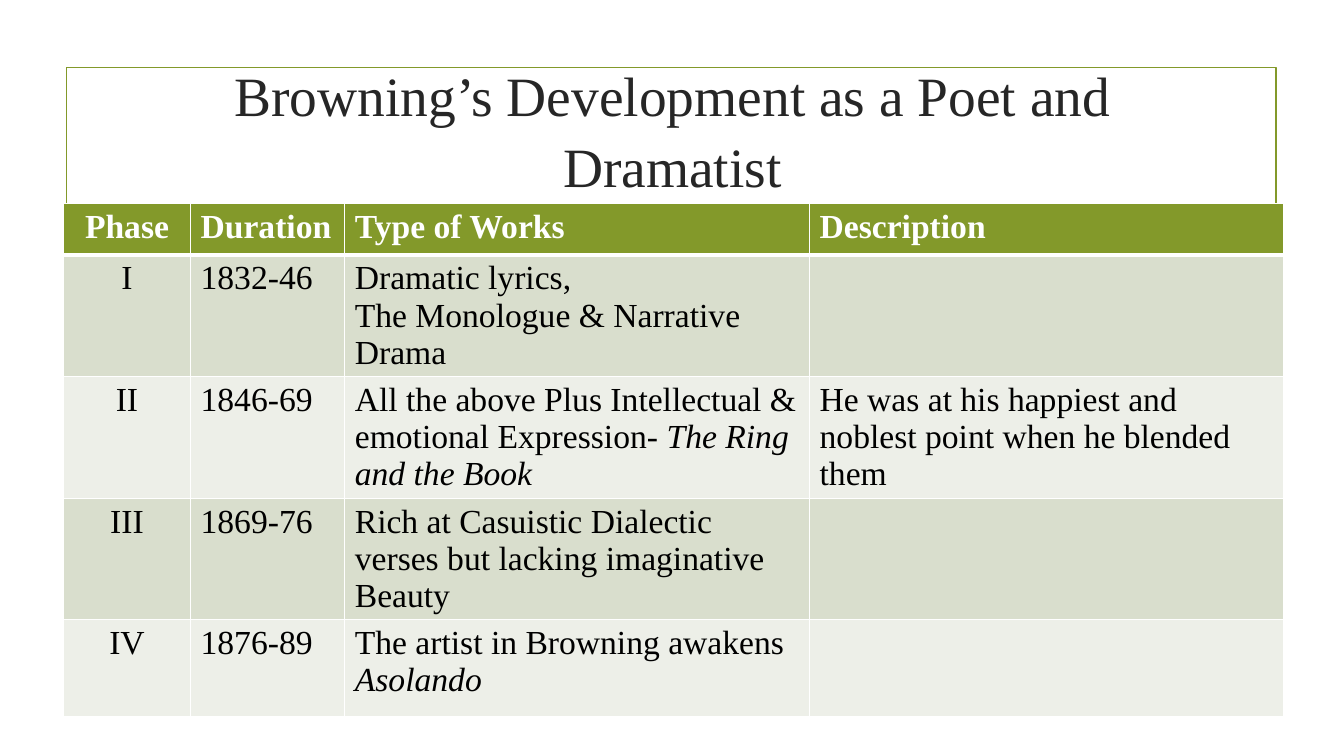
from dataclasses import dataclass

from lxml.etree import SubElement
from pptx import Presentation
from pptx.dml.color import RGBColor
from pptx.enum.shapes import MSO_SHAPE
from pptx.enum.text import MSO_ANCHOR, MSO_AUTO_SIZE, PP_ALIGN
from pptx.oxml.ns import qn
from pptx.slide import Slide
from pptx.table import _Cell as Cell
from pptx.util import Inches, Pt

GREEN = RGBColor(0x83, 0x99, 0x2A)
DARK = RGBColor(0x26, 0x26, 0x26)
BLACK = RGBColor(0, 0, 0)
WHITE = RGBColor(0xFF, 0xFF, 0xFF)
BANDS = (RGBColor(0xD9, 0xDE, 0xCD), RGBColor(0xED, 0xEF, 0xE8))
FACE = "Times New Roman"
HEADS = ("Phase", "Duration", "Type of Works", "Description")
WIDTHS = (1.26, 1.53, 4.61, 4.7)


@dataclass
class Phase:
    name: str
    years: str
    works: str  # a newline starts a paragraph, text after * is italic
    note: str = ""


PHASES = (
    Phase("I", "1832-46", "Dramatic lyrics,\nThe Monologue & Narrative Drama"),
    Phase("II", "1846-69",
          "All the above Plus Intellectual & emotional Expression- *The Ring and the Book",
          "He was at his happiest and noblest point when he blended them"),
    Phase("III", "1869-76",
          "Rich at Casuistic Dialectic verses but lacking imaginative Beauty"),
    Phase("IV", "1876-89", "The artist in Browning awakens\n*Asolando"),
)


def style(font, color: RGBColor, **form) -> None:
    font.color.rgb = color
    for key, value in ({"name": FACE} | form).items():
        setattr(font, key, value)


def edge(cell: Cell, top: float, base: float) -> None:
    """Draw white borders, with the given top and bottom widths."""
    props = cell._tc.get_or_add_tcPr()
    sides = {"lnL": 1, "lnR": 1, "lnT": top, "lnB": base}
    for spot, (tag, width) in enumerate(sides.items()):
        line = props.makeelement(qn(f"a:{tag}"), {"w": str(Pt(width))})
        fill = SubElement(line, qn("a:solidFill"))
        SubElement(fill, qn("a:srgbClr"), val=str(WHITE))
        props.insert(spot, line)


def write(cell: Cell, text: str, color: RGBColor, bold: bool, mid: bool) -> None:
    frame = cell.text_frame
    for num, words in enumerate(text.split("\n")):
        para = frame.add_paragraph() if num else frame.paragraphs[0]
        para.alignment = PP_ALIGN.CENTER if mid else PP_ALIGN.LEFT
        style(para.font, color, size=Pt(24), bold=bold)
        for part, piece in enumerate(words.split("*")):
            if piece:
                run = para.add_run()
                run.text = piece
                style(run.font, color, size=Pt(24), bold=bold, italic=part == 1)


def add_frame(slide: Slide) -> None:
    box = slide.shapes.add_shape(MSO_SHAPE.RECTANGLE, Inches(0.66), Inches(0.67),
                                 Inches(12), Inches(6.17))
    box.shadow.inherit = False
    box.fill.background()
    box.line.color.rgb = GREEN
    box.line.width = Pt(1.25)


def add_title(slide: Slide, text: str) -> None:
    title = slide.shapes.title
    place = {"left": 1.42, "top": 0.72, "width": 10.5, "height": 1.09}
    for key, value in place.items():
        setattr(title, key, Inches(value))
    frame = title.text_frame
    form = {"text": text, "word_wrap": True, "auto_size": MSO_AUTO_SIZE.NONE,
            "vertical_anchor": MSO_ANCHOR.MIDDLE}
    for key, value in form.items():
        setattr(frame, key, value)
    para = frame.paragraphs[0]
    para.alignment = PP_ALIGN.CENTER
    para.line_spacing = 1.07
    style(para.runs[0].font, DARK, size=Pt(39.6))


def add_phases(slide: Slide) -> None:
    rows = [HEADS] + [(p.name, p.years, p.works, p.note) for p in PHASES]
    table = slide.shapes.add_table(len(rows), len(HEADS), Inches(0.63), Inches(2.02),
                                   Inches(sum(WIDTHS)), Inches(4.35)).table
    for col, width in zip(table.columns, WIDTHS):
        col.width = Inches(width)
    for r, texts in enumerate(rows):
        head = r == 0
        table.rows[r].height = Inches(0.51 if head else 0.96)
        for c, text in enumerate(texts):
            cell = table.cell(r, c)
            cell.fill.solid()
            cell.fill.fore_color.rgb = GREEN if head else BANDS[(r - 1) % 2]
            edge(cell, 3 if r == 1 else 1, 3 if head else 1)
            write(cell, text, WHITE if head else BLACK, head, c == 0)


def main() -> None:
    deck = Presentation()
    deck.slide_width, deck.slide_height = Inches(13.33), Inches(7.5)
    slide = deck.slides.add_slide(deck.slide_layouts[5])
    add_frame(slide)
    add_title(slide, "Browning’s Development as a Poet and Dramatist")
    add_phases(slide)
    deck.save("out.pptx")


if __name__ == "__main__":
    main()
